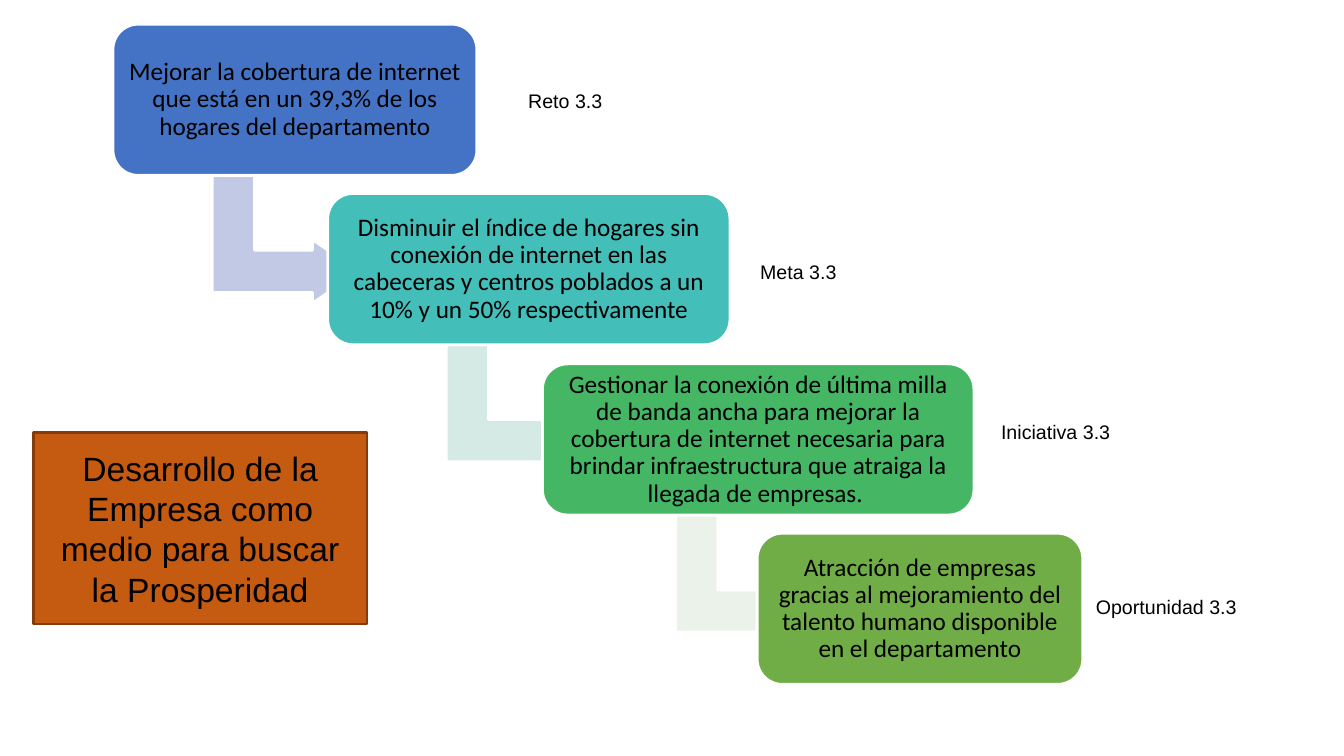
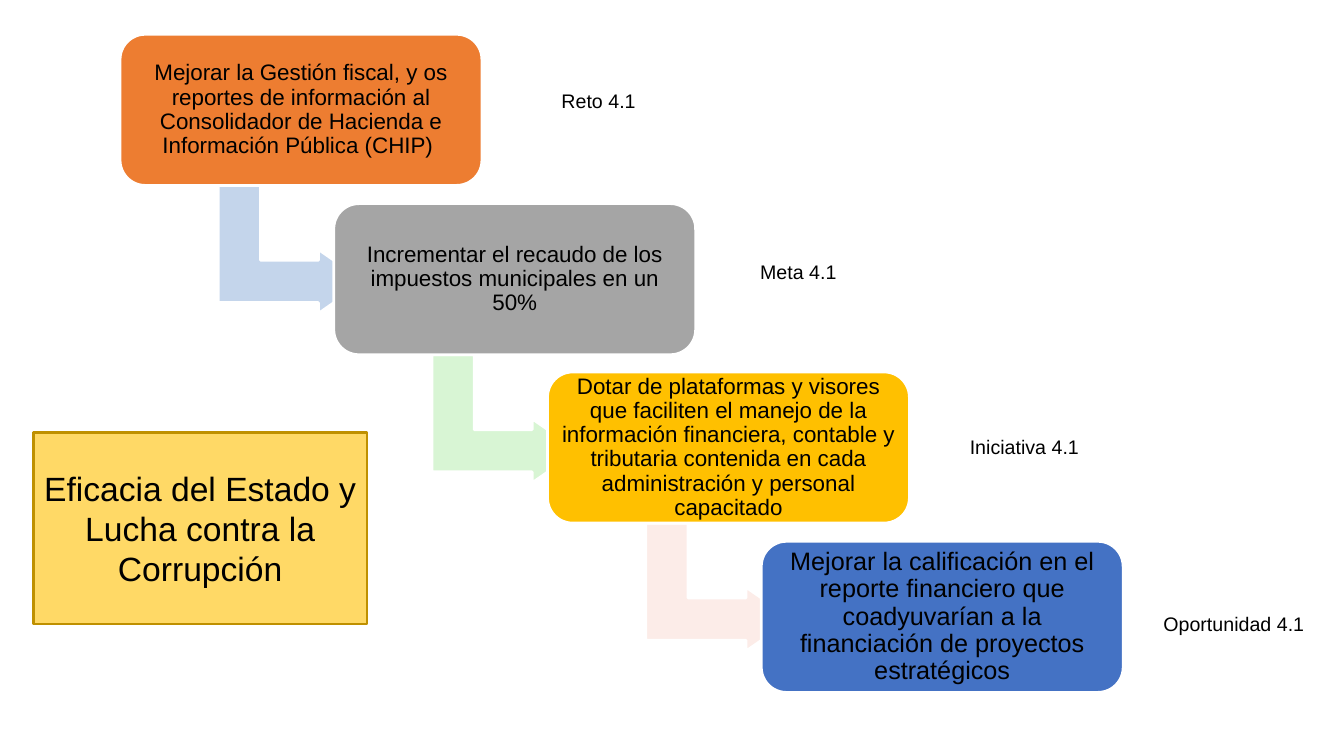
import dataclasses

import pptx
import pptx.dml.color
import pptx.enum.shapes
import pptx.enum.text
import pptx.util

SHAPE = pptx.enum.shapes.MSO_SHAPE
ALIGN = pptx.enum.text.PP_ALIGN
ANCHOR = pptx.enum.text.MSO_ANCHOR
AUTO_SIZE = pptx.enum.text.MSO_AUTO_SIZE
EMU_PER_PX = 9144


@dataclasses.dataclass(frozen=True)
class Theme:
    text: str = "000000"
    outline: str = "FFFFFF"
    font: str = "Arial"
    title_size: int = 24
    label_size: int = 14
    line_width: int = 2
    line_spacing: float = 0.9


THEME = Theme()


@dataclasses.dataclass(frozen=True)
class Step:
    text: str
    width: int
    fill: str
    label: str
    label_box: tuple
    arrow_fill: str = ""
    size: int = 18
    font: str = THEME.font


@dataclasses.dataclass(frozen=True)
class Staircase:
    title: str
    title_fill: str
    title_line: str
    left: int
    top: int
    step_right: int
    drop: int
    steps: tuple


CARD_H = 150
ARROW_W, ARROW_H = 145, 127
ARROW_ADJUSTMENTS = (0.33, 0.25, 0.36)
TITLE_BOX = (33, 429, 331, 190)

STAIRCASES = (
    Staircase(
        "Desarrollo de la Empresa como medio para buscar la Prosperidad",
        "C55A11", "843C0B", 112, 24, 213, 505,
        (
            Step("Mejorar la cobertura de internet que está en un 39,3% de los "
                 "hogares del departamento",
                 361, "4472C4", "Reto 3.3", (514, 83, 94, 34), "C1C9E4",
                 font="Calibri"),
            Step("Disminuir el índice de hogares sin conexión de internet en las "
                 "cabeceras y centros poblados a un 10% y un 50% respectivamente",
                 399, "43BEB9", "Meta 3.3", (744, 253, 96, 34), "D6EAE5",
                 font="Calibri"),
            Step("Gestionar la conexión de última milla de banda ancha para mejorar "
                 "la cobertura de internet necesaria para brindar infraestructura "
                 "que atraiga la llegada de empresas. ",
                 428, "45B664", "Iniciativa 3.3", (983, 412, 129, 34), "EBF2E9",
                 font="Calibri"),
            Step("Atracción de empresas gracias al mejoramiento del talento humano "
                 "disponible en el departamento",
                 323, "70AD47", "Oportunidad 3.3", (1077, 585, 160, 34),
                 font="Calibri"),
        ),
    ),
    Staircase(
        "Eficacia del Estado y Lucha contra la Corrupción",
        "FFD966", "BF9000", 119, 34, 212, 503,
        (
            Step("Mejorar la Gestión fiscal, y os reportes de información al "
                 "Consolidador de Hacienda e Información Pública (CHIP) ",
                 359, "ED7D31", "Reto 4.1", (547, 83, 94, 34), "C4D5EB", 16),
            Step("Incrementar el recaudo de los impuestos municipales en un 50%",
                 359, "A5A5A5", "Meta 4.1", (744, 253, 96, 34), "D8F5D4", 16),
            Step("Dotar de plataformas y visores que faciliten el manejo de la "
                 "información financiera, contable y tributaria contenida en cada "
                 "administración y personal capacitado",
                 359, "FFC000", "Iniciativa 4.1", (952, 427, 129, 34), "FCECE8", 16),
            Step("Mejorar la calificación en el reporte financiero que coadyuvarían "
                 "a la financiación de proyectos estratégicos",
                 359, "4472C4", "Oportunidad 4.1", (1144, 602, 160, 34)),
        ),
    ),
)


def px(n):
    return pptx.util.Emu(round(n * EMU_PER_PX))


def rgb(value):
    return pptx.dml.color.RGBColor.from_string(value)


def paint(sp, fill, line):
    sp.fill.solid()
    sp.fill.fore_color.rgb = rgb(fill)
    sp.line.color.rgb = rgb(line)
    sp.line.width = pptx.util.Pt(THEME.line_width)


def write(tf, text, size, font, align):
    p = tf.paragraphs[0]
    p.alignment = align
    r = p.add_run()
    r.text = text
    r.font.size = pptx.util.Pt(size)
    r.font.name = font
    r.font.bold = False
    r.font.color.rgb = rgb(THEME.text)
    return p


def add_block(shapes, kind, box, fill):
    sp = shapes.add_shape(kind, *map(px, box))
    sp.shadow.inherit = False
    paint(sp, fill, THEME.outline)
    return sp


def add_title(s, box, staircase):
    sp = s.shapes.title
    sp.left, sp.top, sp.width, sp.height = map(px, box)
    paint(sp, staircase.title_fill, staircase.title_line)
    tf = sp.text_frame
    tf.word_wrap = True
    tf.auto_size = AUTO_SIZE.NONE
    tf.vertical_anchor = ANCHOR.MIDDLE
    write(tf, staircase.title, THEME.title_size, THEME.font, ALIGN.CENTER)


def add_label(s, box, text):
    tf = s.shapes.add_textbox(*map(px, box)).text_frame
    tf.word_wrap = False
    write(tf, text, THEME.label_size, THEME.font, ALIGN.LEFT)


def add_arrow(shapes, card_box, fill):
    left, top, width, height = card_box
    center_x = left + width / 2 - 82 + ARROW_W / 2
    center_y = top + height + ARROW_H / 2
    box = (center_x - ARROW_H / 2, center_y - ARROW_W / 2, ARROW_H, ARROW_W)
    sp = add_block(shapes, SHAPE.BENT_UP_ARROW, box, fill)
    sp.rotation = 90
    for i, value in enumerate(ARROW_ADJUSTMENTS):
        sp.adjustments[i] = value


def add_card(shapes, box, step):
    sp = add_block(shapes, SHAPE.ROUNDED_RECTANGLE, box, step.fill)
    tf = sp.text_frame
    tf.word_wrap = True
    tf.vertical_anchor = ANCHOR.MIDDLE
    tf.margin_left = tf.margin_right = tf.margin_top = tf.margin_bottom = px(7)
    p = write(tf, step.text, step.size, step.font, ALIGN.CENTER)
    p.line_spacing = THEME.line_spacing


def add_staircase(s, left, top, staircase):
    shapes = s.shapes.add_group_shape().shapes
    last = len(staircase.steps) - 1
    for i, step in enumerate(staircase.steps):
        box = (left + i * staircase.step_right,
               top + round(i * staircase.drop / last), step.width, CARD_H)
        if step.arrow_fill:
            add_arrow(shapes, box, step.arrow_fill)
        add_card(shapes, box, step)


def build_slide(prs, staircase):
    s = prs.slides.add_slide(prs.slide_layouts.get_by_name("Title Only"))
    add_title(s, TITLE_BOX, staircase)
    add_staircase(s, staircase.left, staircase.top, staircase)
    for step in staircase.steps:
        add_label(s, step.label_box, step.label)


def main():
    prs = pptx.Presentation()
    prs.slide_width = pptx.util.Inches(13.33)
    prs.slide_height = pptx.util.Inches(7.5)
    for staircase in STAIRCASES:
        build_slide(prs, staircase)
    prs.save("out.pptx")


if __name__ == "__main__":
    main()
